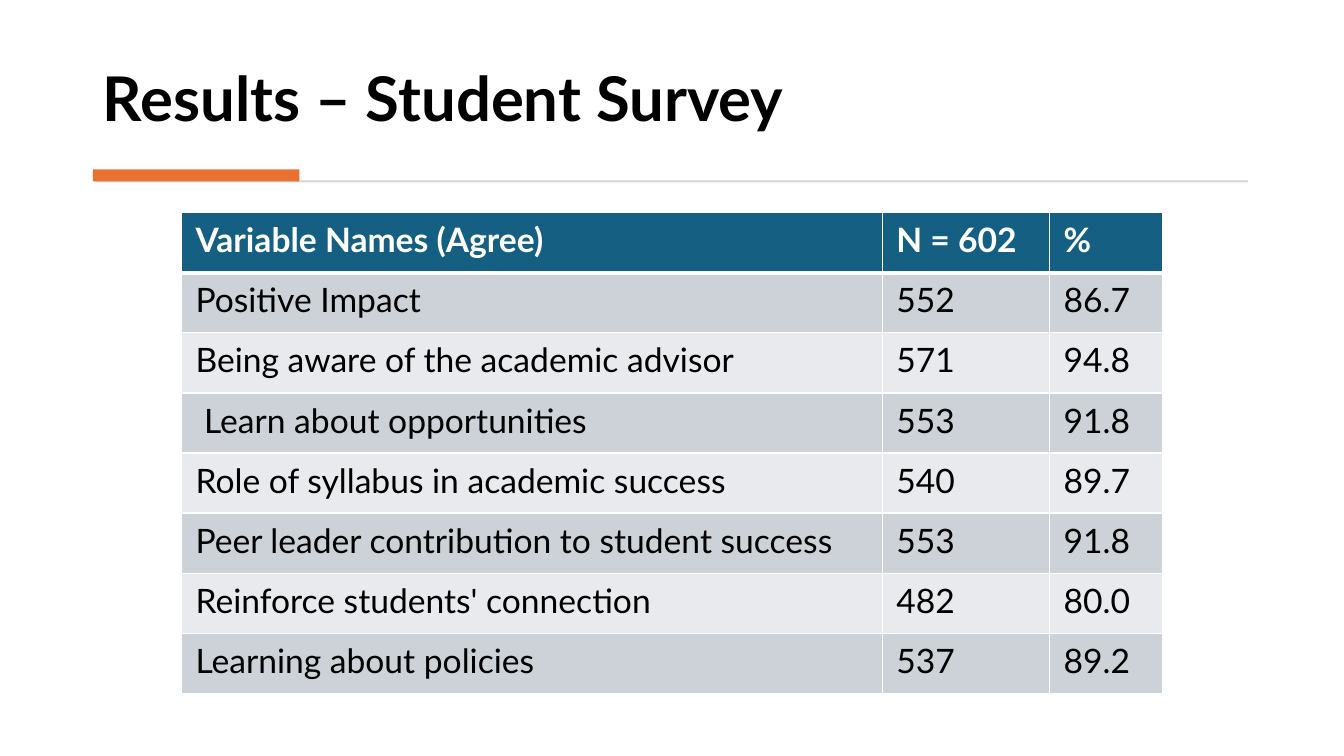
from dataclasses import dataclass

import lxml.etree
import pptx
import pptx.dml.color
import pptx.enum.shapes
import pptx.enum.text
import pptx.oxml.ns
import pptx.util

Inches = pptx.util.Inches
Pt = pptx.util.Pt
RGB = pptx.dml.color.RGBColor.from_string
qn = pptx.oxml.ns.qn


@dataclass(frozen=True)
class Theme:
    font: str = "Lato"
    title_size: int = 44
    table_size: int = 24
    text: str = "000000"
    white: str = "FFFFFF"
    rule: str = "D5D5D5"
    accent: str = "E97132"
    header: str = "156082"
    bands: tuple = ("CCD2D8", "E8EAED")


THEME = Theme()
HEADER = ("Variable Names (Agree)", "N = 602", "%")
RESULTS = (
    ("Positive Impact", "552", "86.7"),
    ("Being aware of the academic advisor", "571", "94.8"),
    (" Learn about opportunities", "553", "91.8"),
    ("Role of syllabus in academic success", "540", "89.7"),
    ("Peer leader contribution to student success", "553", "91.8"),
    ("Reinforce students' connection", "482", "80.0"),
    ("Learning about policies", "537", "89.2"),
)
COLUMN_WIDTHS = (6.95, 1.66, 1.12)


def style_paragraph(p, size, color, bold):
    p.alignment = pptx.enum.text.PP_ALIGN.LEFT
    p.font.name = THEME.font
    p.font.size = Pt(size)
    p.font.bold = bold
    p.font.color.rgb = RGB(color)


def add_title(slide, text, left, top, width, height):
    sp = slide.shapes.title
    sp.left, sp.top = Inches(left), Inches(top)
    sp.width, sp.height = Inches(width), Inches(height)
    tf = sp.text_frame
    tf.text = text
    tf.word_wrap = True
    tf.auto_size = pptx.enum.text.MSO_AUTO_SIZE.NONE
    tf.vertical_anchor = pptx.enum.text.MSO_ANCHOR.BOTTOM
    p = tf.paragraphs[0]
    p.line_spacing = 0.9
    style_paragraph(p, THEME.title_size, THEME.text, True)


def add_bar(slide, color, left, top, width, height):
    sp = slide.shapes.add_shape(
        pptx.enum.shapes.MSO_SHAPE.RECTANGLE,
        Inches(left), Inches(top), Inches(width), Inches(height))
    sp.shadow.inherit = False
    sp.fill.solid()
    sp.fill.fore_color.rgb = RGB(color)
    sp.line.fill.background()


def add_divider(slide, left, top, width):
    add_bar(slide, THEME.rule, left + 0.03, top + 0.11, width - 0.06, 0.02)
    add_bar(slide, THEME.accent, left, top, 2.05, 0.12)


def add_border(cell, side, width):
    tcPr = cell._tc.get_or_add_tcPr()
    ln = lxml.etree.SubElement(tcPr, qn(f"a:ln{side}"), w=str(Pt(width)))
    fill = lxml.etree.SubElement(ln, qn("a:solidFill"))
    lxml.etree.SubElement(fill, qn("a:srgbClr"), val=THEME.white)


def style_cell(cell, text, row):
    is_header = row == 0
    cell.text = text
    cell.margin_left = cell.margin_right = Inches(0.14)
    cell.margin_top = cell.margin_bottom = Inches(0.07)
    widths = {"L": 1, "R": 1, "T": 3 if row == 1 else 1, "B": 3 if is_header else 1}
    for side, width in widths.items():
        add_border(cell, side, width)
    cell.fill.solid()
    cell.fill.fore_color.rgb = RGB(
        THEME.header if is_header else THEME.bands[(row - 1) % 2])
    style_paragraph(cell.text_frame.paragraphs[0], THEME.table_size,
                    THEME.white if is_header else THEME.text, is_header)


def add_results_table(slide, left, top, height):
    rows = (HEADER, *RESULTS)
    table = slide.shapes.add_table(
        len(rows), len(HEADER), Inches(left), Inches(top),
        Inches(sum(COLUMN_WIDTHS)), Inches(height)).table
    for column, width in zip(table.columns, COLUMN_WIDTHS):
        column.width = Inches(width)
    for i, values in enumerate(rows):
        table.rows[i].height = Inches(height / len(rows))
        for j, value in enumerate(values):
            style_cell(table.cell(i, j), value, i)


def add_results_slide(prs):
    slide = prs.slides.add_slide(prs.slide_layouts.get_by_name("Title Only"))
    slide.background.fill.solid()
    slide.background.fill.fore_color.rgb = RGB(THEME.white)
    add_title(slide, "Results – Student Survey", 0.92, 0.28, 11.49, 1.11)
    add_divider(slide, 0.92, 1.68, 11.49)
    add_results_table(slide, 1.8, 2.11, 4.77)


def main():
    prs = pptx.Presentation()
    prs.slide_width, prs.slide_height = Inches(13.33), Inches(7.5)
    add_results_slide(prs)
    prs.save("out.pptx")


if __name__ == "__main__":
    main()
